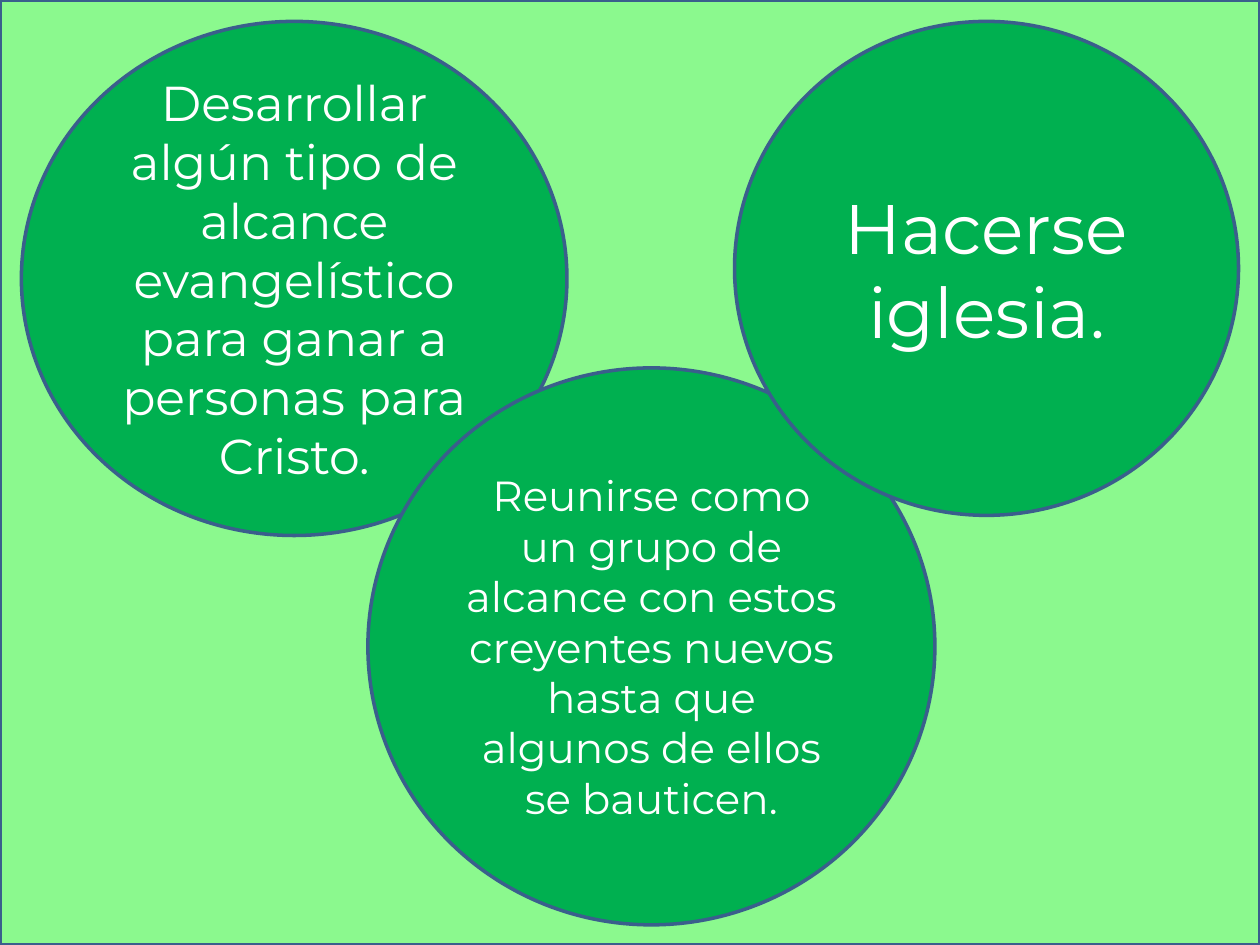
from dataclasses import dataclass

from pptx import Presentation
from pptx.dml.color import RGBColor
from pptx.enum.shapes import MSO_SHAPE
from pptx.enum.text import MSO_ANCHOR, PP_ALIGN
from pptx.shapes.autoshape import Shape
from pptx.slide import Slide
from pptx.util import Inches, Pt

LIGHT_GREEN = RGBColor(0x8B, 0xF9, 0x8E)
GREEN = RGBColor(0x00, 0xB0, 0x50)
BLUE = RGBColor(0x3A, 0x5F, 0x8C)
WHITE = RGBColor(0xFF, 0xFF, 0xFF)
FONT = "Montserrat"
WIDTH, HEIGHT = 10, 7.5


@dataclass(frozen=True)
class Step:
    text: str
    left: float
    top: float
    width: float
    height: float
    size: int


STEPS = (
    Step("Desarrollar algún tipo de alcance evangelístico para ganar a personas para Cristo.",
         0.17, 0.17, 4.33, 4.08, 28),
    Step("Reunirse como un grupo de alcance con estos creyentes nuevos "
         "hasta que algunos de ellos se bauticen.",
         2.92, 2.92, 4.5, 4.42, 24),
    Step("Hacerse iglesia.", 5.83, 0.17, 4, 3.92, 40),
)


def add_outlined(page: Slide, kind: MSO_SHAPE, left: float, top: float,
                 width: float, height: float, color: RGBColor) -> Shape:
    shape = page.shapes.add_shape(
        kind, Inches(left), Inches(top), Inches(width), Inches(height))
    shape.shadow.inherit = False
    shape.fill.solid()
    shape.fill.fore_color.rgb = color
    shape.line.color.rgb = BLUE
    shape.line.width = Pt(2)
    return shape


def write_text(shape: Shape, text: str, *, size: int, color: RGBColor = WHITE,
               align: PP_ALIGN = PP_ALIGN.CENTER) -> None:
    frame = shape.text_frame
    frame.word_wrap = True
    frame.vertical_anchor = MSO_ANCHOR.MIDDLE
    para = frame.paragraphs[0]
    para.alignment = align
    span = para.add_run()
    span.text = text
    span.font.name = FONT
    span.font.size = Pt(size)
    span.font.color.rgb = color


def draw_step(page: Slide, step: Step) -> None:
    circle = add_outlined(page, MSO_SHAPE.OVAL, step.left, step.top,
                          step.width, step.height, GREEN)
    write_text(circle, step.text, size=step.size)


def main() -> None:
    deck = Presentation()
    deck.slide_width = Inches(WIDTH)
    deck.slide_height = Inches(HEIGHT)
    page = deck.slides.add_slide(deck.slide_layouts[6])
    add_outlined(page, MSO_SHAPE.RECTANGLE, 0, 0, WIDTH, HEIGHT, LIGHT_GREEN)
    for step in STEPS:
        draw_step(page, step)
    deck.save("out.pptx")


if __name__ == "__main__":
    main()
